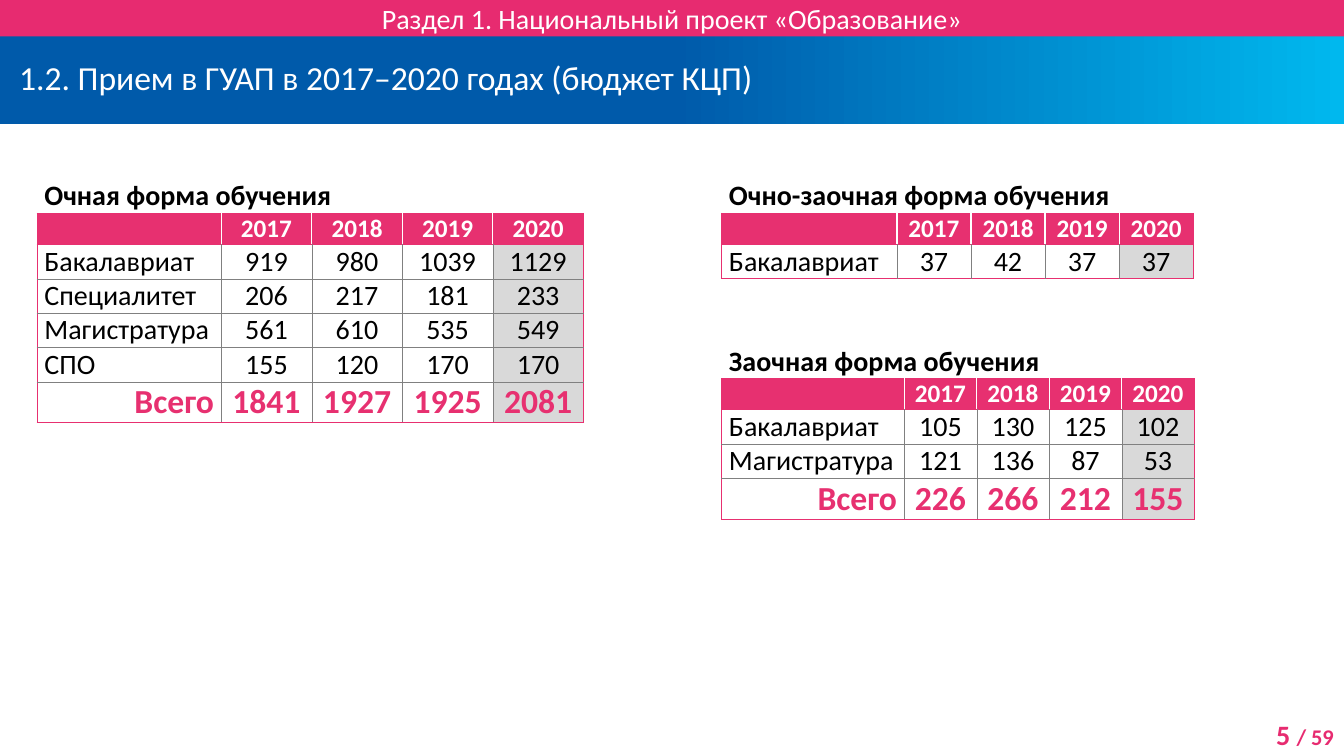
from lxml import etree
from copy import deepcopy
from pptx import Presentation
from pptx import util as u
from pptx.dml.color import RGBColor
from pptx.enum import shapes, text
from pptx.oxml.ns import qn

COLORS = {"band": "E72B70", "pink": "E73070", "blue": "005AAA", "cyan": "00B8EE",
          "white": "FFFFFF", "black": "000000", "grid": "808080", "latest": "D9D9D9"}
YEARS = ["2017", "2018", "2019", "2020"]
TOTAL = "Всего"
LEFT, CENTER, RIGHT = text.PP_ALIGN.LEFT, text.PP_ALIGN.CENTER, text.PP_ALIGN.RIGHT
MIDDLE = text.MSO_ANCHOR.MIDDLE
# Row heights that fit one line of each text size
LINE_HEIGHT = {18: 22, 20: 24.4, 24: 29.3}


def rgb(name):
    return RGBColor.from_string(COLORS[name])


class AdmissionSlide:
    """Keeps the font and the slide that is being filled."""

    font_name = "Calibri"

    def __init__(self, deck):
        self.slide = deck.slides.add_slide(deck.slide_layouts[5])

    def style(self, paragraph, size, color, bold=False, align=LEFT):
        paragraph.alignment = align
        font = paragraph.font
        font.name, font.size, font.bold = self.font_name, u.Pt(size), bold
        font.color.rgb = rgb(color)

    def frame(self, shape, side_inset):
        frame = shape.text_frame
        frame.word_wrap = True
        frame.auto_size = text.MSO_AUTO_SIZE.NONE
        frame.vertical_anchor = MIDDLE
        frame.margin_left = frame.margin_right = u.Pt(side_inset)
        frame.margin_top = frame.margin_bottom = 0
        return frame

    def title(self, wording, left, top, width, height):
        title = self.slide.shapes.title
        title.left, title.top = u.Pt(left), u.Pt(top)
        title.width, title.height = u.Pt(width), u.Pt(height)
        title.fill.gradient()
        title.fill.gradient_angle = 0
        stops = title._element.spPr.find(".//" + qn("a:gsLst"))
        stops.append(deepcopy(stops[-1]))
        for stop, (position, color) in zip(title.fill.gradient_stops,
                                           [(0, "blue"), (0.5, "blue"), (1, "cyan")]):
            stop.position = position
            stop.color.rgb = rgb(color)
        frame = self.frame(title, 7.2)
        frame.text = wording
        heading = frame.paragraphs[0]
        heading._p.get_or_add_pPr().set("marL", str(u.Pt(6.5)))
        heading.line_spacing = u.Pt(24)
        self.style(heading, 24, "white")

    def section_band(self, wording, left, top, width, height):
        band = self.slide.shapes.add_shape(shapes.MSO_SHAPE.RECTANGLE, u.Pt(left), u.Pt(top),
                                           u.Pt(width), u.Pt(height))
        band.shadow.inherit = False
        band.fill.solid()
        band.fill.fore_color.rgb = rgb("band")
        band.line.fill.background()
        frame = self.frame(band, 0)
        frame.text = wording
        self.style(frame.paragraphs[0], 20, "white", align=CENTER)

    def page_number(self, page, count, left, top, width, height):
        box = self.slide.shapes.add_textbox(u.Pt(left), u.Pt(top), u.Pt(width), u.Pt(height))
        numbering = self.frame(box, 7.2).paragraphs[0]
        self.style(numbering, 20, "band", True, RIGHT)
        for wording, size in [(f"{page} ", 20), (f"/ {count}", 16)]:
            run = numbering.add_run()
            run.text = wording
            run.font.size = u.Pt(size)

    def borders(self, cell, edges):
        properties = cell._tc.get_or_add_tcPr()
        for index, (side, color) in enumerate(edges.items()):
            width = u.Pt(0.25 if color == "grid" else 1)
            line = etree.Element(qn(f"a:ln{side}"), w=str(width))
            if color:
                fill = etree.SubElement(line, qn("a:solidFill"))
                etree.SubElement(fill, qn("a:srgbClr"), val=COLORS[color])
            else:
                etree.SubElement(line, qn("a:noFill"))
            properties.insert(index, line)

    def cell(self, cell, wording, size, color, bold, align, fill=None):
        cell.margin_left = cell.margin_right = u.Pt(5.2)
        cell.margin_top = cell.margin_bottom = 0
        cell.vertical_anchor = MIDDLE
        if fill:
            cell.fill.solid()
            cell.fill.fore_color.rgb = rgb(fill)
        else:
            cell.fill.background()
        cell.text = wording
        self.style(cell.text_frame.paragraphs[0], size, color, bold, align)

    def admission_table(self, caption, intake, left, top, label_width, year_width):
        rows = [[caption] + [""] * len(YEARS), [""] + YEARS]
        rows += [[level, *map(str, counts)] for level, counts in intake.items()]
        sizes = [20, 18] + [24 if level == TOTAL else 20 for level in intake]
        heights = [LINE_HEIGHT[size] for size in sizes]
        widths = [label_width] + [year_width] * len(YEARS)
        table = self.slide.shapes.add_table(len(rows), len(widths), u.Pt(left), u.Pt(top),
                                            u.Pt(sum(widths)), u.Pt(sum(heights))).table
        table.first_row = table.horz_banding = False
        for column, width in zip(table.columns, widths):
            column.width = u.Pt(width)
        last_row, last_col = len(rows) - 1, len(widths) - 1
        for r, (values, size) in enumerate(zip(rows, sizes)):
            table.rows[r].height = u.Pt(heights[r])
            is_total = values[0] == TOTAL
            inner = "white" if r == 1 else "grid"
            for c, value in enumerate(values):
                cell = table.cell(r, c)
                align = CENTER if c else RIGHT if is_total else LEFT
                if r == 0:
                    self.cell(cell, value, size, "black", True, LEFT)
                    edges = {"L": None, "R": None, "T": None, "B": "pink"}
                else:
                    if r == 1:
                        self.cell(cell, value, size, "white", True, align, "pink")
                    else:
                        self.cell(cell, value, size, "pink" if is_total else "black",
                                  is_total, align, "latest" if c == last_col else None)
                    edges = {"L": inner if c else "pink",
                             "R": "pink" if c == last_col else inner,
                             "T": "pink" if r <= 2 else "grid",
                             "B": "pink" if r in (1, last_row) else "grid"}
                self.borders(cell, edges)
        table.cell(0, 0).merge(table.cell(0, last_col - 1))


def main():
    deck = Presentation()
    deck.slide_width, deck.slide_height = u.Pt(960), u.Pt(540)
    page = AdmissionSlide(deck)

    # Header and page number
    page.page_number(5, 59, 873.5, 508.3, 86.4, 31.7)
    page.title("1.2. Прием в ГУАП в 2017–2020 годах (бюджет КЦП)", 0, 26, 960, 62.6)
    page.section_band("Раздел 1. Национальный проект «Образование»", 0, 0, 960, 26)

    # Full-time study
    page.admission_table("Очная форма обучения", {
        "Бакалавриат": [919, 980, 1039, 1129],
        "Специалитет": [206, 217, 181, 233],
        "Магистратура": [561, 610, 535, 549],
        "СПО": [155, 120, 170, 170],
        TOTAL: [1841, 1927, 1925, 2081],
    }, 26.5, 128, 131.5, 64.7)

    # Part-time study
    page.admission_table("Очно-заочная форма обучения", {
        "Бакалавриат": [37, 42, 37, 37],
    }, 515.5, 128, 125.2, 52.9)

    # Correspondence study
    page.admission_table("Заочная форма обучения", {
        "Бакалавриат": [105, 130, 125, 102],
        "Магистратура": [121, 136, 87, 53],
        TOTAL: [226, 266, 212, 155],
    }, 515.5, 246, 130.4, 51.8)

    deck.save("out.pptx")


if __name__ == "__main__":
    main()
